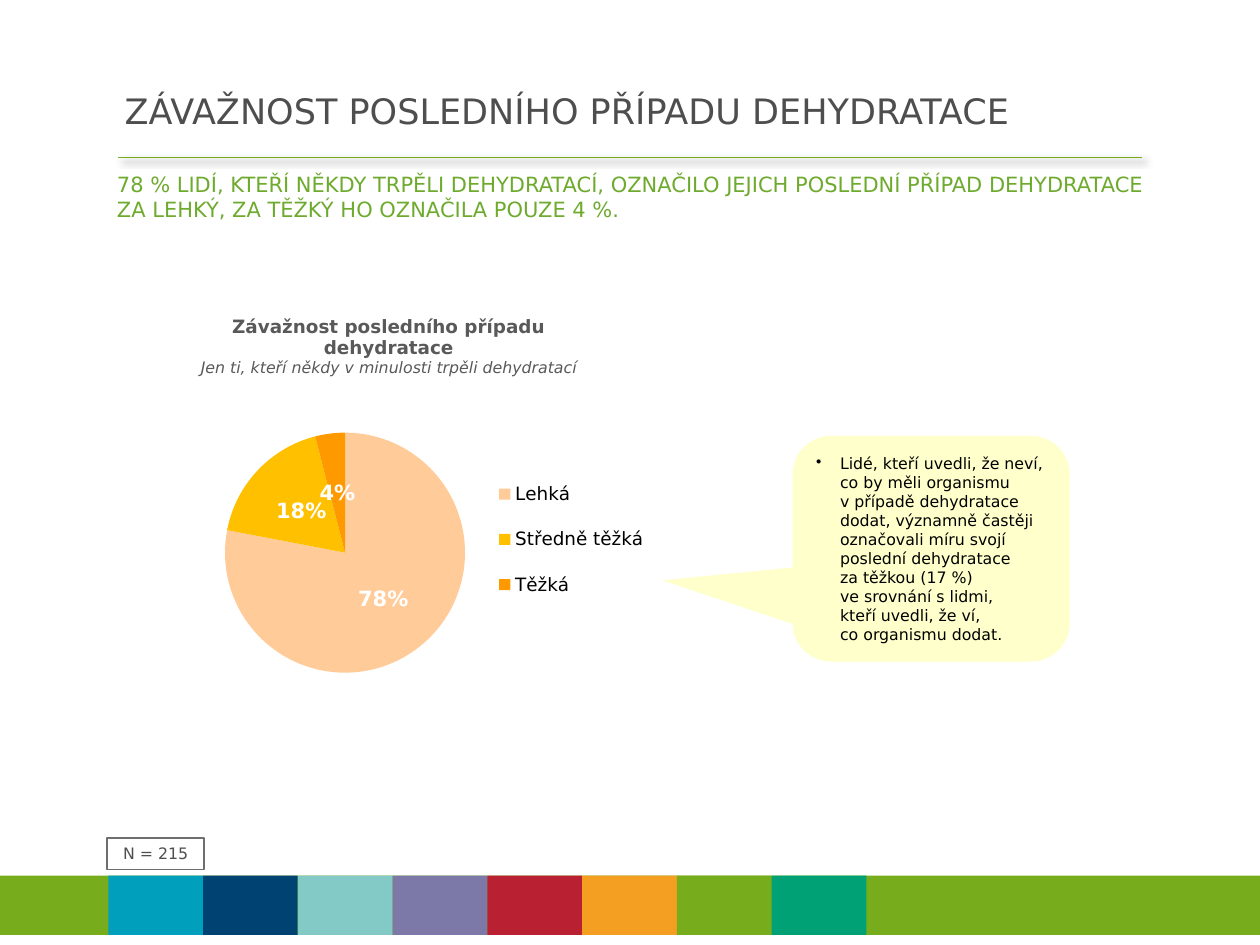
from copy import deepcopy
from dataclasses import dataclass

from pptx import Presentation
from pptx.chart.data import CategoryChartData
from pptx.dml.color import RGBColor
from pptx.enum.chart import XL_CHART_TYPE, XL_LABEL_POSITION, XL_LEGEND_POSITION
from pptx.enum.shapes import MSO_CONNECTOR, MSO_SHAPE
from pptx.enum.text import MSO_ANCHOR, PP_ALIGN
from pptx.oxml import parse_xml
from pptx.oxml.ns import nsdecls, qn
from pptx.util import Inches, Pt


@dataclass(frozen=True)
class Theme:
    """Colours, font and type sizes of the deck."""
    font: str = "DejaVu Sans"
    heading: str = "4E4E4E"
    accent: str = "6EAA2E"
    band: str = "77AD1C"
    tiles: tuple = ("009FBB", "004272", "83C9C6", "7C78A8",
                    "B92032", "F49F22", "77AD1C", "00A275")
    slices: tuple = ("FFCC99", "FFC000", "FF9900")
    caption: str = "595959"
    frame: str = "6E6E6E"
    note: str = "FFFFCC"
    black: str = "000000"
    white: str = "FFFFFF"
    title_size: float = 20
    lead_size: float = 12
    chart_size: float = 10.5
    small_size: float = 9


def cells(*lengths):
    """Turn grid columns or rows, ten to the inch, into lengths."""
    return [Inches(length / 10) for length in lengths]


def style_font(font, name, size, color, bold=False, italic=False):
    """Apply one format to a font."""
    font.name, font.size = name, Pt(size)
    font.bold, font.italic = bold, italic
    font.color.rgb = RGBColor.from_string(color)


def write(para, text, align=PP_ALIGN.LEFT, **form):
    """Write text with its line breaks into a paragraph."""
    para.text = text
    para.alignment = align
    for span in para.runs:
        style_font(span.font, **form)
    for line_break in para._p.findall(qn("a:br")):
        line_break.append(deepcopy(para.runs[0]._r.get_or_add_rPr()))


def set_layout(parent, index, left, top, width, height, inner=False):
    """Fix the place of a chart part in shares of the chart."""
    for old in parent.findall(qn("c:layout")):
        parent.remove(old)
    values = {"xMode": "edge", "yMode": "edge", "x": left, "y": top,
              "w": width, "h": height}
    target = '<c:layoutTarget val="inner"/>' if inner else ""
    parts = "".join(f'<c:{key} val="{value}"/>' for key, value in values.items())
    parent.insert(index, parse_xml(
        f'<c:layout {nsdecls("c")}><c:manualLayout>{target}{parts}'
        '</c:manualLayout></c:layout>'))


class Painter:
    """Holds the theme and the current slide."""

    def __init__(self, page, theme):
        """Keep the page and its theme."""
        self.page, self.theme = page, theme

    def form(self, size, color, **more):
        """Return a text format in the theme font."""
        return dict(name=self.theme.font, size=size, color=color, **more)

    def text(self, place, words, anchor=MSO_ANCHOR.TOP, **form):
        """Add a wrapping text box."""
        frame = self.page.shapes.add_textbox(*cells(*place)).text_frame
        frame.word_wrap = True
        frame.vertical_anchor = anchor
        write(frame.paragraphs[0], words, **form)

    def shape(self, place, fill=None, line=None, kind=MSO_SHAPE.RECTANGLE):
        """Add a preset shape without shadow."""
        box = self.page.shapes.add_shape(kind, *cells(*place))
        box.shadow.inherit = False
        for paint, color in ((box.fill, fill), (box.line.fill, line)):
            if color:
                paint.solid()
                paint.fore_color.rgb = RGBColor.from_string(color)
            else:
                paint.background()
        if line:
            box.line.width = Pt(0.75)
        box.text_frame.word_wrap = True
        box.text_frame.vertical_anchor = MSO_ANCHOR.MIDDLE
        return box

    def rule(self, left, right, row):
        """Add a horizontal line with a soft shadow."""
        line = self.page.shapes.add_connector(
            MSO_CONNECTOR.STRAIGHT, *cells(left, row, right, row))
        line.line.width = Pt(0.75)
        line.line.color.rgb = RGBColor.from_string(self.theme.band)
        line._element.spPr.append(parse_xml(
            f'<a:effectLst {nsdecls("a")}><a:outerShdw blurRad="{Pt(4)}" '
            f'dist="{Pt(3)}" dir="{45 * 60000}"><a:srgbClr val="{self.theme.black}">'
            '<a:alpha val="40000"/></a:srgbClr></a:outerShdw></a:effectLst>'))

    def band(self, top, height, first, pitch):
        """Add the footer band with its coloured tiles."""
        self.shape((0, top, 100, height), self.theme.band)
        for index, color in enumerate(self.theme.tiles):
            self.shape((first + index * pitch, top, pitch, height), color)

    def callout(self, place, words, adjustments):
        """Add a speech bubble with one bullet."""
        box = self.shape(place, self.theme.note,
                         kind=MSO_SHAPE.ROUNDED_RECTANGULAR_CALLOUT)
        for index, value in enumerate(adjustments):
            box.adjustments[index] = value
        para = box.text_frame.paragraphs[0]
        write(para, words, **self.form(self.theme.small_size, self.theme.black))
        layout = para._p.get_or_add_pPr()
        indent = Inches(0.19)
        layout.set("marL", str(indent))
        layout.set("indent", str(-indent))
        layout.append(parse_xml(f'<a:buChar {nsdecls("a")} char="•"/>'))

    def pie(self, place, title, subtitle, shares):
        """Add a pie chart with a two-part title and a legend."""
        theme = self.theme
        data = CategoryChartData(number_format="0%")
        data.categories = list(shares)
        data.add_series("Series 1", list(shares.values()))
        chart = self.page.shapes.add_chart(
            XL_CHART_TYPE.PIE, *cells(*place), data).chart
        style_font(chart.font, **self.form(theme.chart_size, theme.black))
        frame = chart.chart_title.text_frame
        write(frame.paragraphs[0], title, PP_ALIGN.CENTER,
              **self.form(theme.chart_size, theme.caption, bold=True))
        write(frame.add_paragraph(), subtitle, PP_ALIGN.CENTER,
              **self.form(theme.small_size, theme.caption, italic=True))
        chart.has_legend = True
        legend = chart.legend
        legend.position = XL_LEGEND_POSITION.LEFT
        legend.include_in_layout = False
        style_font(legend.font, **self.form(theme.chart_size, theme.black))
        set_layout(legend._element, 1, 0.68, 0.37, 0.31, 0.36)
        plot = chart.plots[0]
        plot.vary_by_categories = True
        set_layout(plot._element.getparent(), 0, 0.2, 0.31, 0.44, 0.54, inner=True)
        for index, color in enumerate(theme.slices):
            fill = plot.series[0].points[index].format.fill
            fill.solid()
            fill.fore_color.rgb = RGBColor.from_string(color)
        plot.has_data_labels = True
        labels = plot.data_labels
        labels.show_value, labels.show_percentage = True, False
        labels.number_format, labels.number_format_is_linked = "0%", False
        labels.position = XL_LABEL_POSITION.CENTER
        style_font(labels.font, **self.form(theme.lead_size, theme.white, bold=True))


def main():
    """Build the slide and save it."""
    deck = Presentation()
    deck.slide_width, deck.slide_height = cells(100, 75)
    theme = Theme()
    painter = Painter(deck.slides.add_slide(deck.slide_layouts[6]), theme)
    painter.rule(9.4, 90.6, 12.5)
    painter.band(69.5, 4.7, first=8.6, pitch=7.52)
    painter.text((8.9, 6.2, 88.7, 5.1), "ZÁVAŽNOST POSLEDNÍHO PŘÍPADU DEHYDRATACE",
                 MSO_ANCHOR.MIDDLE, **painter.form(theme.title_size, theme.heading))
    painter.text((8.3, 13.1, 83.5, 8),
                 "78 % LIDÍ, KTEŘÍ NĚKDY TRPĚLI DEHYDRATACÍ, OZNAČILO JEJICH POSLEDNÍ "
                 "PŘÍPAD DEHYDRATACE ZA LEHKÝ, ZA TĚŽKÝ HO OZNAČILA POUZE 4 %.",
                 **painter.form(theme.lead_size, theme.accent))
    painter.pie((9.2, 23.4, 43.3, 35.3), "Závažnost posledního případu dehydratace",
                "Jen ti, kteří někdy v minulosti trpěli dehydratací",
                {"Lehká": 0.78, "Středně těžká": 0.18, "Těžká": 0.04})
    sample = painter.shape((8.5, 66.5, 7.7, 2.5), line=theme.frame)
    write(sample.text_frame.paragraphs[0], "N = 215", PP_ALIGN.CENTER,
          **painter.form(theme.small_size, theme.heading))
    painter.callout((62.9, 34.6, 22, 17.9),
                    "Lidé, kteří uvedli, že neví, co by měli organismu\v"
                    "v případě dehydratace dodat, významně častěji označovali míru "
                    "svojí poslední dehydratace\vza těžkou (17 %)\vve srovnání s lidmi,\v"
                    "kteří uvedli, že ví,\vco organismu dodat.", (-0.97, 0.14, 0.17))
    deck.save("out.pptx")


if __name__ == "__main__":
    main()
